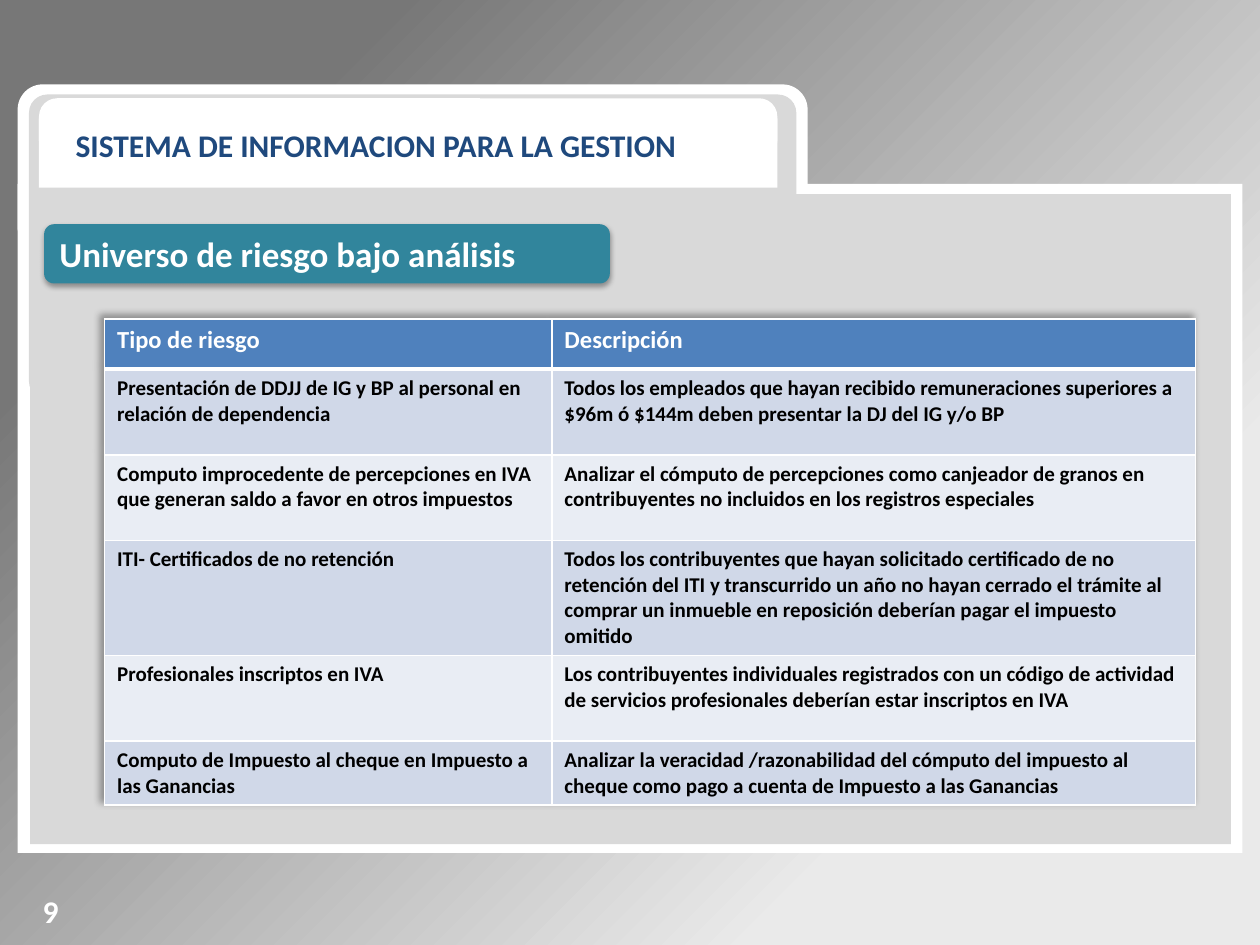
"""Build the slide on the universe of tax risks under analysis."""
from dataclasses import dataclass
from typing import Any, Optional

import pptx
import pptx.dml.color
import pptx.enum.shapes
import pptx.enum.text
import pptx.oxml
import pptx.oxml.ns
import pptx.util

Inches = pptx.util.Inches
Pt = pptx.util.Pt
ANCHOR = pptx.enum.text.MSO_ANCHOR
DRAWING = pptx.oxml.ns.nsdecls("a")
WHITE, GREY, NAVY, TEAL = "FFFFFF", "D9D9D9", "1F497D", "31859C"
HEADER, BANDS = "4F81BD", ("E9EDF4", "D0D8E8")


@dataclass
class Panel:
    left: float
    top: float
    width: float
    height: float
    fill: str
    corner: Optional[float] = None


FOLDER = [
    Panel(0.14, 1.46, 9.72, 5.31, WHITE),
    Panel(0.14, 0.67, 6.27, 1.33, WHITE, 0.15),
    Panel(0.24, 1.54, 9.53, 5.16, GREY),
    Panel(0.23, 0.75, 6.09, 2.42, GREY, 0.06),
    Panel(0.31, 0.78, 5.86, 0.48, WHITE, 0.3),
    Panel(0.31, 0.94, 5.86, 0.55, WHITE),
]
COLUMN_WIDTHS = (3.55, 5.11)
ROW_HEIGHTS = (0.4, 0.68, 0.68, 0.9, 0.68, 0.5)
RISKS = [
    ("Tipo de riesgo", "Descripción"),
    ("Presentación de DDJJ de IG y BP al personal en relación de dependencia",
     "Todos los empleados que hayan recibido remuneraciones superiores a $96m ó $144m "
     "deben presentar la DJ del IG y/o BP"),
    ("Computo improcedente de percepciones en IVA que generan saldo a favor en otros impuestos",
     "Analizar el cómputo de percepciones como canjeador de granos en contribuyentes "
     "no incluidos en los registros especiales"),
    ("ITI- Certificados de no retención",
     "Todos los contribuyentes que hayan solicitado certificado de no retención del ITI y "
     "transcurrido un año no hayan cerrado el trámite al comprar un inmueble en reposición "
     "deberían pagar el impuesto omitido"),
    ("Profesionales inscriptos en IVA",
     "Los contribuyentes individuales registrados con un código de actividad de servicios "
     "profesionales deberían estar inscriptos en IVA"),
    ("Computo de Impuesto al cheque en Impuesto a las Ganancias",
     "Analizar la veracidad /razonabilidad del cómputo del impuesto al cheque como pago a "
     "cuenta de Impuesto a las Ganancias"),
]


def color(value: str) -> pptx.dml.color.RGBColor:
    """Return the colour for a hex string."""
    return pptx.dml.color.RGBColor.from_string(value)


def write(frame: Any, text: str, *, size: float, fill: str, bold: bool = True,
          anchor: Any = ANCHOR.TOP, space_after: float = 0) -> None:
    """Write one left-aligned formatted paragraph into a text frame."""
    frame.word_wrap = True
    frame.vertical_anchor = anchor
    paragraph = frame.paragraphs[0]
    paragraph.alignment = pptx.enum.text.PP_ALIGN.LEFT
    paragraph.space_after = Pt(space_after)
    run = paragraph.add_run()
    run.text = text
    run.font.name = "Calibri"
    run.font.size = Pt(size)
    run.font.bold = bold
    run.font.color.rgb = color(fill)


def shadow_effect(blur: float, distance: float, angle: int) -> Any:
    """Return a black outer shadow at 35 percent opacity."""
    return pptx.oxml.parse_xml(
        f'<a:effectLst {DRAWING}><a:outerShdw blurRad="{Pt(blur)}" dist="{Pt(distance)}" '
        f'dir="{angle * 60000}" rotWithShape="0"><a:srgbClr val="000000">'
        '<a:alpha val="35000"/></a:srgbClr></a:outerShdw></a:effectLst>')


def add_panel(slide: Any, panel: Panel) -> Any:
    """Draw a plain or rounded rectangle without outline."""
    kinds = pptx.enum.shapes.MSO_SHAPE
    kind = kinds.RECTANGLE if panel.corner is None else kinds.ROUNDED_RECTANGLE
    shape = slide.shapes.add_shape(kind, Inches(panel.left), Inches(panel.top),
                                   Inches(panel.width), Inches(panel.height))
    if panel.corner is not None:
        shape.adjustments[0] = panel.corner
    shape.shadow.inherit = False
    shape.fill.solid()
    shape.fill.fore_color.rgb = color(panel.fill)
    shape.line.fill.background()
    return shape


def add_backdrop(slide: Any) -> None:
    """Cover the slide with a grey gradient spreading from the lower right corner."""
    shape = add_panel(slide, Panel(0, 0, 10, 7.5, WHITE))
    shape.fill.gradient()
    stops = ((0.23, "EAEAEA"), (0.82, "777777"))
    for stop, (position, value) in zip(shape.fill.gradient_stops, stops):
        stop.position = position
        stop.color.rgb = color(value)
    gradient = shape._element.spPr.find(pptx.oxml.ns.qn("a:gradFill"))
    gradient.replace(gradient.find(pptx.oxml.ns.qn("a:lin")), pptx.oxml.parse_xml(
        f'<a:path {DRAWING} path="circle"><a:fillToRect l="100000" t="100000"/></a:path>'))


def add_title(slide: Any) -> None:
    """Place the title on the folder tab, in front of the panels."""
    title = slide.shapes.title
    title.left, title.top = Inches(0.5), Inches(0.95)
    title.width, title.height = Inches(5.47), Inches(0.4)
    write(title.text_frame, "SISTEMA DE INFORMACION PARA LA GESTION",
          size=18, fill=NAVY, anchor=ANCHOR.MIDDLE)
    slide.shapes._spTree.append(title._element)


def add_heading(slide: Any) -> None:
    """Draw the teal heading bar with its shadow."""
    bar = add_panel(slide, Panel(0.35, 1.78, 4.49, 0.47, TEAL, 0.17))
    properties = bar._element.spPr
    properties.replace(properties.find(pptx.oxml.ns.qn("a:effectLst")),
                       shadow_effect(3.1, 1.8, 90))
    write(bar.text_frame, "Universo de riesgo bajo análisis", size=20, fill=WHITE,
          anchor=ANCHOR.MIDDLE, space_after=10)


def format_cell(cell: Any, fill: str, bottom: float) -> None:
    """Give a cell white borders and a solid fill."""
    properties = cell._tc.get_or_add_tcPr()
    for side, width in (("L", 1), ("R", 1), ("T", 1), ("B", bottom)):
        properties.append(pptx.oxml.parse_xml(
            f'<a:ln{side} {DRAWING} w="{Pt(width)}"><a:solidFill>'
            f'<a:srgbClr val="{WHITE}"/></a:solidFill></a:ln{side}>'))
    cell.fill.solid()
    cell.fill.fore_color.rgb = color(fill)


def add_risk_table(slide: Any) -> None:
    """Add the table of risk types and their descriptions."""
    table = slide.shapes.add_table(
        len(RISKS), len(COLUMN_WIDTHS), Inches(0.83), Inches(2.53),
        Inches(sum(COLUMN_WIDTHS)), Inches(sum(ROW_HEIGHTS))).table
    table._tbl.tblPr.insert(0, shadow_effect(4, 3, 225))
    for column, width in zip(table.columns, COLUMN_WIDTHS):
        column.width = Inches(width)
    for index, (row, height, texts) in enumerate(zip(table.rows, ROW_HEIGHTS, RISKS)):
        row.height = Inches(height)
        header = index == 0
        for cell, text in zip(row.cells, texts):
            format_cell(cell, HEADER if header else BANDS[index % 2], 3 if header else 1)
            write(cell.text_frame, text, size=14 if header else 12,
                  fill=WHITE if header else "000000")


def main() -> None:
    """Build and save the presentation."""
    presentation = pptx.Presentation()
    presentation.slide_width, presentation.slide_height = Inches(10), Inches(7.5)
    slide = presentation.slides.add_slide(presentation.slide_layouts.get_by_name("Title Only"))
    add_backdrop(slide)
    for panel in FOLDER:
        add_panel(slide, panel)
    number = slide.shapes.add_textbox(Inches(0.24), Inches(7.03), Inches(2.33), Inches(0.4))
    write(number.text_frame, "9", size=18, fill=WHITE)
    add_title(slide)
    add_heading(slide)
    add_risk_table(slide)
    presentation.save("out.pptx")


if __name__ == "__main__":
    main()
